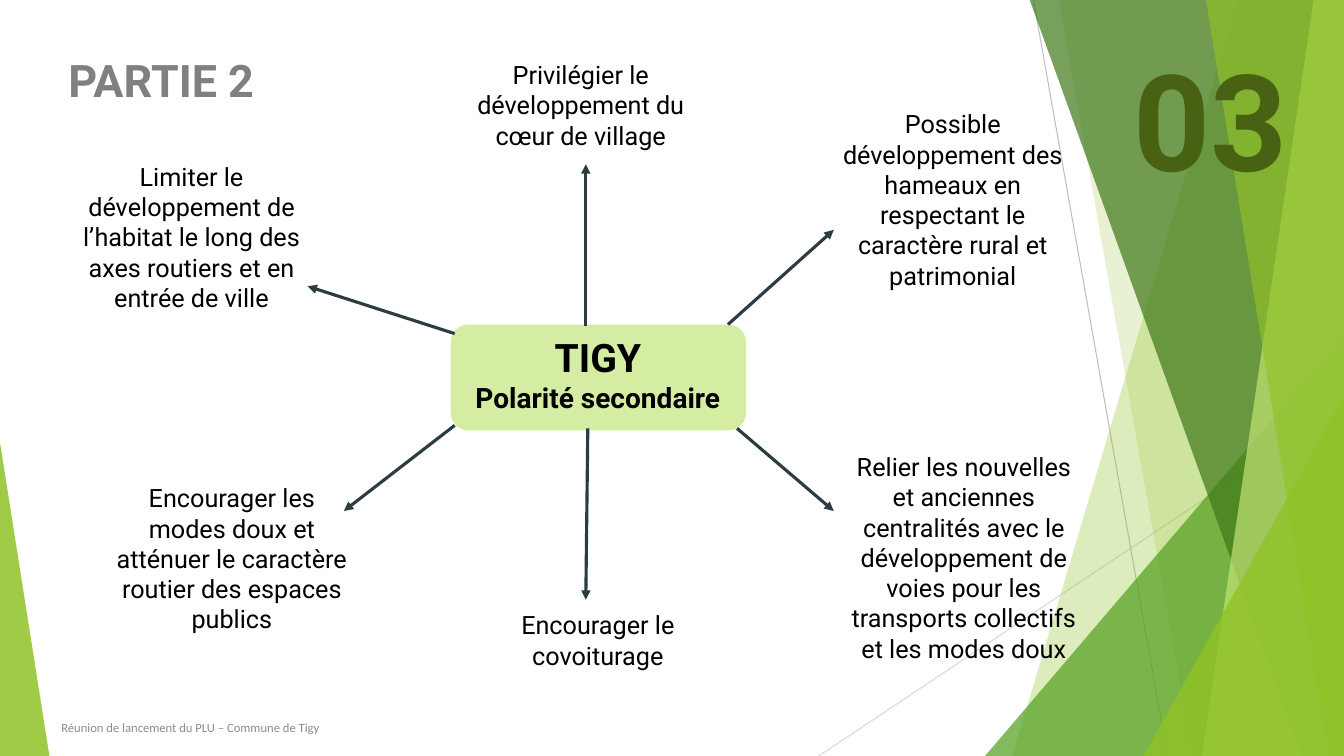
import pptx
import pptx.util
import pptx.dml.color
import pptx.enum.shapes
import pptx.enum.text
import pptx.oxml
import pptx.oxml.ns
import lxml.etree

RGBColor = pptx.dml.color.RGBColor
Shapes = pptx.enum.shapes.MSO_SHAPE
Anchor = pptx.enum.text.MSO_ANCHOR
Align = pptx.enum.text.PP_ALIGN
qn = pptx.oxml.ns.qn

PX = 9144  # 100 px to the inch
WIDTH, HEIGHT = 1333, 750
TOP = -1  # facets start just above the slide

LEAF = RGBColor(0x90, 0xC2, 0x26)
GRASS = RGBColor(0x54, 0xA0, 0x21)
FOREST = RGBColor(0x3F, 0x78, 0x19)
LIME = RGBColor(0xC0, 0xE4, 0x74)
PALE = RGBColor(0xD5, 0xED, 0xA2)
OLIVE = RGBColor(0x48, 0x61, 0x13)
SLATE = RGBColor(0x2C, 0x3C, 0x43)
BLACK = RGBColor(0x00, 0x00, 0x00)
GREY = RGBColor(0x80, 0x80, 0x80)
FOOTER_GREY = RGBColor(0x8C, 0x8C, 0x8C)
RULE_GREY = RGBColor(0xBF, 0xBF, 0xBF)
RULE_LIGHT = RGBColor(0xD9, 0xD9, 0xD9)

# Left, top, height, wording; all ideas share one width
IDEA_WIDTH = 258
IDEAS = [
    (447, 54, 101, "Privilégier le développement du cœur de village"),
    (816, 103, 192, "Possible développement des hameaux en respectant le "
                    "caractère rural et patrimonial"),
    (827, 443, 222, "Relier les nouvelles et anciennes centralités avec le "
                    "développement de voies pour les transports collectifs "
                    "et les modes doux"),
    (101, 474, 162, "Encourager les modes doux et atténuer le caractère "
                    "routier des espaces publics"),
    (464, 600, 71, "Encourager le covoiturage"),
    (61, 155, 162, "Limiter le développement de l’habitat le long des axes "
                   "routiers et en entrée de ville"),
]

ARROWS = [
    ((722, 322), (827, 228)),
    ((731, 425), (827, 507)),
    ((581, 323), (581, 163)),
    ((451, 331), (305, 284)),
    ((451, 422), (341, 507)),
    ((583, 425), (581, 595)),
]


def px(*lengths):
    return [length * PX for length in lengths]


def paint(shape, colour, opacity=100):
    shape.shadow.inherit = False
    shape.line.fill.background()
    shape.fill.solid()
    shape.fill.fore_color.rgb = colour
    if opacity < 100:
        tint = shape._element.spPr.find(qn("a:solidFill"))[0]
        alpha = lxml.etree.SubElement(tint, qn("a:alpha"))
        alpha.set("val", str(opacity * 1000))


def add_facet(page, top_left, bottom_left, colour, opacity):
    """Band from a slanted left side to the right edge of the slide."""
    builder = page.shapes.build_freeform(top_left, TOP, scale=PX)
    builder.add_line_segments(
        [(WIDTH, TOP), (WIDTH, HEIGHT), (bottom_left, HEIGHT)], close=True)
    paint(builder.convert_to_shape(), colour, opacity)


def add_triangle(page, left, top, width, apex, colour, opacity):
    """Triangle standing on the bottom edge of the slide."""
    triangle = page.shapes.add_shape(
        Shapes.ISOSCELES_TRIANGLE, *px(left, top, width, HEIGHT - top))
    triangle.adjustments[0] = apex
    paint(triangle, colour, opacity)


def add_line(page, start, end, colour, weight, arrow=False):
    line = page.shapes.add_connector(
        pptx.enum.shapes.MSO_CONNECTOR.STRAIGHT, *px(*start, *end))
    line.line.color.rgb = colour
    line.line.width = pptx.util.Pt(weight)
    if arrow:
        tail = lxml.etree.SubElement(line.line._get_or_add_ln(), qn("a:tailEnd"))
        tail.set("type", "triangle")
    lxml.etree.SubElement(line._element.spPr, qn("a:effectLst"))


def add_text(page, frame, lines, colour, bold=False, align=Align.CENTER,
             font="Roboto", anchor=Anchor.TOP):
    """Text box whose lines are (wording, size) pairs, one paragraph each."""
    box = page.shapes.add_textbox(*px(*frame))
    text_frame = box.text_frame
    text_frame.word_wrap = True
    text_frame.vertical_anchor = anchor
    text_frame.text = "\n".join(wording for wording, size in lines)
    for para, (wording, size) in zip(text_frame.paragraphs, lines):
        para.alignment = align
        for span in para.runs:
            span.font.name = font
            span.font.size = pptx.util.Pt(size)
            span.font.bold = bold
            span.font.color.rgb = colour


def add_backdrop(page):
    add_line(page, (1025, 0), (1158, HEIGHT), RULE_GREY, 0.75)
    add_line(page, (WIDTH, 403), (812, HEIGHT), RULE_LIGHT, 0.75)
    add_facet(page, 1228, 1004, LEAF, 30)
    add_facet(page, 1050, 1183, LEAF, 20)
    add_triangle(page, 977, 333, 356, 1, GRASS, 72)
    add_facet(page, 1021, 1291, FOREST, 70)
    add_facet(page, 1303, 1192, LIME, 70)
    add_facet(page, 1196, 1318, LEAF, 65)
    add_triangle(page, 1134, 393, 199, 1, LEAF, 80)
    add_triangle(page, 0, 439, 49, 0, LEAF, 85)


def main():
    deck = pptx.Presentation()
    deck.slide_width, deck.slide_height = px(WIDTH, HEIGHT)
    page = deck.slides.add_slide(deck.slide_layouts[6])

    add_backdrop(page)

    # Headings and footer
    add_text(page, (1098, 32, 206, 172), [("03", 96)], OLIVE, bold=True)
    add_text(page, (58, 47, 940, 70), [("PARTIE 2", 32)], GREY, bold=True,
             align=Align.LEFT)
    add_text(page, (51, 702, 689, 40),
             [("Réunion de lancement du PLU – Commune de Tigy", 9)],
             FOOTER_GREY, align=Align.LEFT, font="Calibri",
             anchor=Anchor.MIDDLE)

    # Central hub
    hub = page.shapes.add_shape(Shapes.ROUNDED_RECTANGLE,
                                *px(447, 322, 293, 105))
    paint(hub, PALE)
    add_text(page, (437, 326, 312, 91),
             [("TIGY", 28), ("Polarité secondaire", 20)], BLACK, bold=True)

    # Ideas around the hub
    for left, top, height, wording in IDEAS:
        add_text(page, (left, top, IDEA_WIDTH, height), [(wording, 18)], BLACK)
    for start, end in ARROWS:
        add_line(page, start, end, SLATE, 2.25, arrow=True)

    deck.save("out.pptx")


if __name__ == "__main__":
    main()
